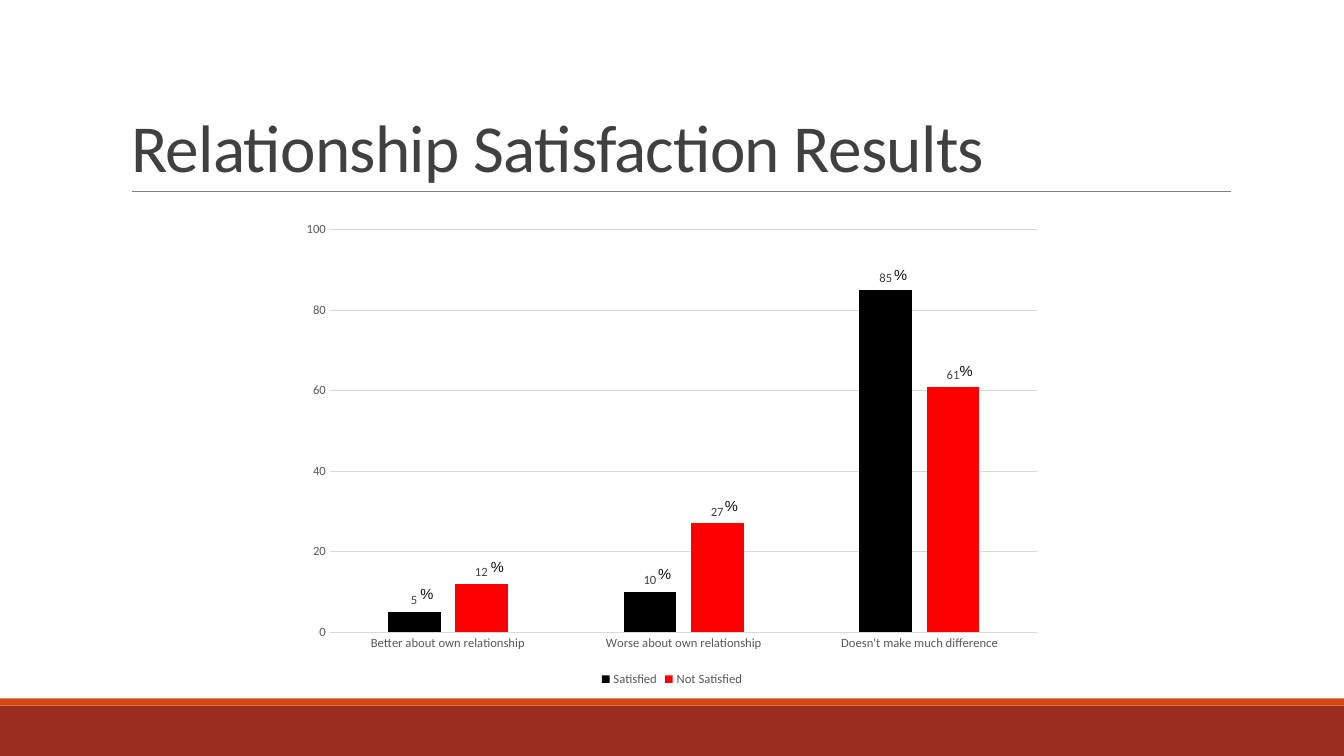
from lxml import etree
from pptx import Presentation
from pptx import util as u
from pptx.chart.data import CategoryChartData
from pptx.dml.color import RGBColor
from pptx.enum import chart as charts, shapes, text
from pptx.oxml.ns import qn

CATEGORIES = ["Better about own relationship", "Worse about own relationship",
              "Doesn't make much difference"]
SERIES = [("Satisfied", (5, 10, 85), "000000"),
          ("Not Satisfied", (12, 27, 61), "FF0000")]
PERCENT_SIGNS = [(4.77, 5.48), (4.07, 5.75), (6.43, 5.55),
                 (7.09, 4.88), (8.77, 2.59), (9.42, 3.54)]


def color(value):
    return RGBColor.from_string(value)


def box(*lengths):
    return [u.Inches(length) for length in lengths]


class SlideBuilder:
    """Adds consistently styled elements to one slide."""

    def __init__(self, slide, font="Calibri"):
        self.slide = slide
        self.font = font

    def style(self, font, size, fill, name=None):
        font.name = name or self.font
        font.size = u.Pt(size)
        font.bold = False
        font.color.rgb = color(fill)

    def band(self, top, height, fill):
        shape = self.slide.shapes.add_shape(
            shapes.MSO_SHAPE.RECTANGLE, *box(0, top, 13.33, height))
        shape.shadow.inherit = False
        shape.fill.solid()
        shape.fill.fore_color.rgb = color(fill)
        shape.line.fill.background()

    def rule(self, left, right, top, line_color):
        line = self.slide.shapes.add_connector(
            shapes.MSO_CONNECTOR.STRAIGHT, *box(left, top, right, top))
        line.line.color.rgb = color(line_color)
        line.line.width = u.Pt(0.5)
        etree.SubElement(line._element.spPr, qn("a:effectLst"))

    def title(self, words, *place):
        shape = self.slide.shapes.title
        shape.left, shape.top, shape.width, shape.height = box(*place)
        frame = shape.text_frame
        frame.text = words
        frame.word_wrap = True
        frame.vertical_anchor = text.MSO_ANCHOR.BOTTOM
        paragraph = frame.paragraphs[0]
        paragraph.alignment = text.PP_ALIGN.LEFT
        paragraph.line_spacing = 0.85
        run = paragraph.runs[0]
        self.style(run.font, 48, "404040")
        run.font._element.set("spc", "-50")

    def label(self, words, left, top):
        frame = self.slide.shapes.add_textbox(*box(left, top, 0.81, 0.28)).text_frame
        frame.text = words
        frame.word_wrap = True
        self.style(frame.paragraphs[0].runs[0].font, 10.5, "0C0C0C", "Arial")

    def grey_line(self, line):
        line.color.rgb = color("D9D9D9")
        line.width = u.Pt(0.75)

    def column_chart(self, categories, series_rows, *place):
        data = CategoryChartData()
        data.categories = categories
        for name, values, _ in series_rows:
            data.add_series(name, values)
        chart = self.slide.shapes.add_chart(
            charts.XL_CHART_TYPE.COLUMN_CLUSTERED, *box(*place), data).chart
        self.style(chart.font, 10, "000000")
        chart.has_title = False
        chart.has_legend = True
        chart.legend.position = charts.XL_LEGEND_POSITION.BOTTOM
        chart.legend.include_in_layout = False
        self.style(chart.legend.font, 9, "595959")

        for axis in (chart.category_axis, chart.value_axis):
            axis.major_tick_mark = charts.XL_TICK_MARK.NONE
            axis.minor_tick_mark = charts.XL_TICK_MARK.NONE
            self.style(axis.tick_labels.font, 9, "595959")
        self.grey_line(chart.category_axis.format.line)
        value_axis = chart.value_axis
        value_axis.format.line.fill.background()
        value_axis.minimum_scale = 0
        value_axis.maximum_scale = 100
        value_axis.major_unit = 20
        value_axis.has_major_gridlines = True
        self.grey_line(value_axis.major_gridlines.format.line)

        plot = chart.plots[0]
        plot.vary_by_categories = False
        plot.gap_width = 219
        plot.overlap = -27
        for series, (_, _, fill) in zip(plot.series, series_rows):
            series.format.fill.solid()
            series.format.fill.fore_color.rgb = color(fill)
            labels = series.data_labels
            labels.show_value = True
            labels.position = charts.XL_LABEL_POSITION.OUTSIDE_END
            self.style(labels.font, 9, "404040")


def main():
    presentation = Presentation()
    presentation.slide_width, presentation.slide_height = box(13.33, 7.5)
    slide = presentation.slides.add_slide(presentation.slide_layouts[5])
    builder = SlideBuilder(slide)
    builder.band(7, 0.5, "9B2D1F")
    builder.band(6.93, 0.07, "D34817")
    builder.rule(1.31, 12.21, 1.9, "808080")
    builder.title("Relationship Satisfaction Results", 1.2, 0.31, 11, 1.59)
    builder.column_chart(CATEGORIES, SERIES, 2.89, 2.11, 7.55, 4.74)
    for left, top in PERCENT_SIGNS:
        builder.label("%", left, top)
    presentation.save("out.pptx")


if __name__ == "__main__":
    main()
